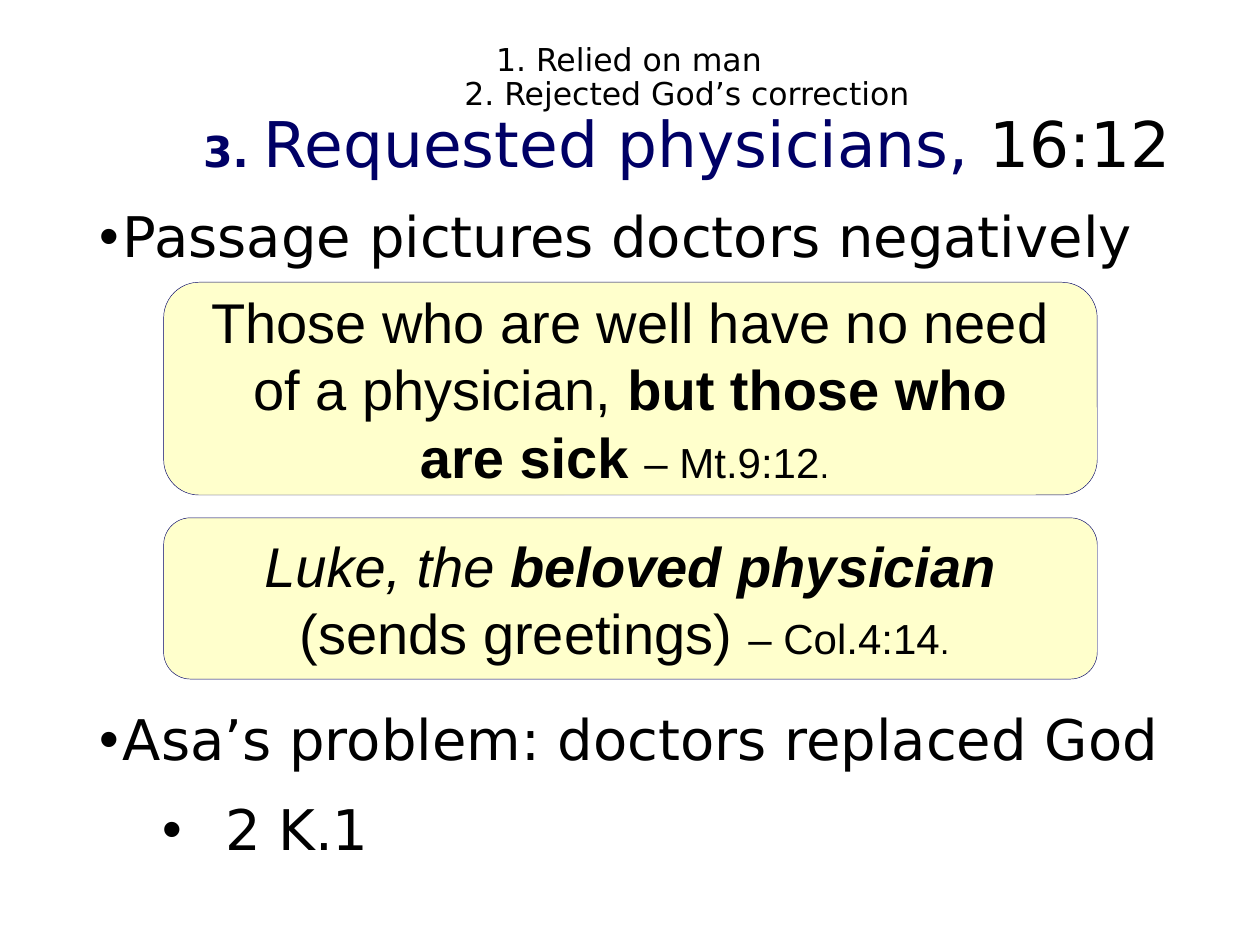
from lxml import etree
from pptx import Presentation
from pptx import util as u
from pptx.dml.color import RGBColor
from pptx.enum import shapes, text
from pptx.oxml.ns import qn

BLACK, NAVY, CREAM = "000000", "000066", "FFFFCC"
SANS, QUOTE = "DejaVu Sans", "Arial"

HEADING = [
    ("1. Relied on man\n2. Rejected God’s correction\n", dict(size=18)),
    ("3. ", dict(size=24.3, color=NAVY, bold=True)),
    ("Requested physicians,", dict(size=36, color=NAVY)),
    (" 16:12", dict(size=36)),
]
POINTS = [
    ("Passage pictures doctors negatively", dict(left=0.48, hang=0.48)),
    ("Asa’s problem: doctors replaced God",
     dict(left=0.48, hang=0.48, before=253, after=12)),
    ("2 K.1", dict(left=2.54, hang=1.27, before=5, level=1)),
]
QUOTES = [
    (5.69, 4.29, [
        [("Those who are well have no need", {})],
        [("of a physician, ", {}),
         ("but those who\nare sick ", dict(bold=True)),
         ("– Mt.9:12", dict(size=24)),
         (".", dict(size=20)),
         (" ", dict(size=24))],
    ]),
    (10.44, 3.25, [
        [("Luke, the ", dict(italic=True)),
         ("beloved physician\n", dict(bold=True, italic=True)),
         ("(sends greetings) ", {}),
         ("– Col.4:14", dict(size=24)),
         (".", dict(size=20)),
         (" ", dict(size=24))],
    ]),
]


def rgb(value):
    return RGBColor.from_string(value)


def place(shape, left, top, width, height):
    shape.left, shape.top = u.Cm(left), u.Cm(top)
    shape.width, shape.height = u.Cm(width), u.Cm(height)


def write(paragraph, words, size=32, font=SANS, color=BLACK, bold=False, italic=False):
    for index, line in enumerate(words.split("\n")):
        if index:
            paragraph.add_line_break()
        if line:
            run = paragraph.add_run()
            run.text = line
            run.font.size, run.font.name = u.Pt(size), font
            run.font.bold, run.font.italic = bold, italic
            run.font.color.rgb = rgb(color)


def indent(paragraph, left, hang, bullet=None):
    props = paragraph._p.get_or_add_pPr()
    props.set("marL", str(u.Cm(left)))
    props.set("indent", str(-u.Cm(hang)))
    if bullet:
        etree.SubElement(props, qn("a:buFont")).set("typeface", "Arial")
        etree.SubElement(props, qn("a:buChar")).set("char", bullet)
    paragraph.line_spacing = 0.9


def next_paragraph(frame, index):
    return frame.add_paragraph() if index else frame.paragraphs[0]


def add_heading(slide):
    title = slide.shapes.title
    place(title, 1.35, 0.43, 22.66, 3.68)
    frame = title.text_frame
    frame.auto_size = text.MSO_AUTO_SIZE.NONE
    frame.vertical_anchor = text.MSO_ANCHOR.MIDDLE
    heading = frame.paragraphs[0]
    heading.alignment = text.PP_ALIGN.CENTER
    indent(heading, 2.34, 2.34)
    for words, style in HEADING:
        write(heading, words, **style)


def add_points(slide):
    box = slide.shapes.add_textbox(u.Cm(1.75), u.Cm(4.09), u.Cm(21.9), u.Cm(13.46))
    frame = box.text_frame
    frame.word_wrap = True
    for index, (words, layout) in enumerate(POINTS):
        point = next_paragraph(frame, index)
        point.level = layout.get("level", 0)
        indent(point, layout["left"], layout["hang"], "•")
        point.space_before = u.Pt(layout.get("before", 0))
        point.space_after = u.Pt(layout.get("after", 0))
        write(point, words)


def add_quote(slide, top, height, lines):
    card = slide.shapes.add_shape(
        shapes.MSO_SHAPE.ROUNDED_RECTANGLE, u.Cm(3.3), u.Cm(top), u.Cm(18.82), u.Cm(height))
    card.shadow.inherit = False
    card.fill.solid()
    card.fill.fore_color.rgb = rgb(CREAM)
    card.line.color.rgb = rgb(NAVY)
    card.line.width = u.Pt(0.25)
    frame = card.text_frame
    frame.word_wrap = False
    frame.vertical_anchor = text.MSO_ANCHOR.MIDDLE
    for index, runs in enumerate(lines):
        line = next_paragraph(frame, index)
        line.alignment = text.PP_ALIGN.CENTER
        for words, style in runs:
            write(line, words, font=QUOTE, **style)


def main():
    deck = Presentation()
    deck.slide_width, deck.slide_height = u.Cm(25.4), u.Cm(19.05)
    slide = deck.slides.add_slide(deck.slide_layouts[5])
    add_heading(slide)
    add_points(slide)
    for top, height, lines in QUOTES:
        add_quote(slide, top, height, lines)
    deck.save("out.pptx")


if __name__ == "__main__":
    main()
